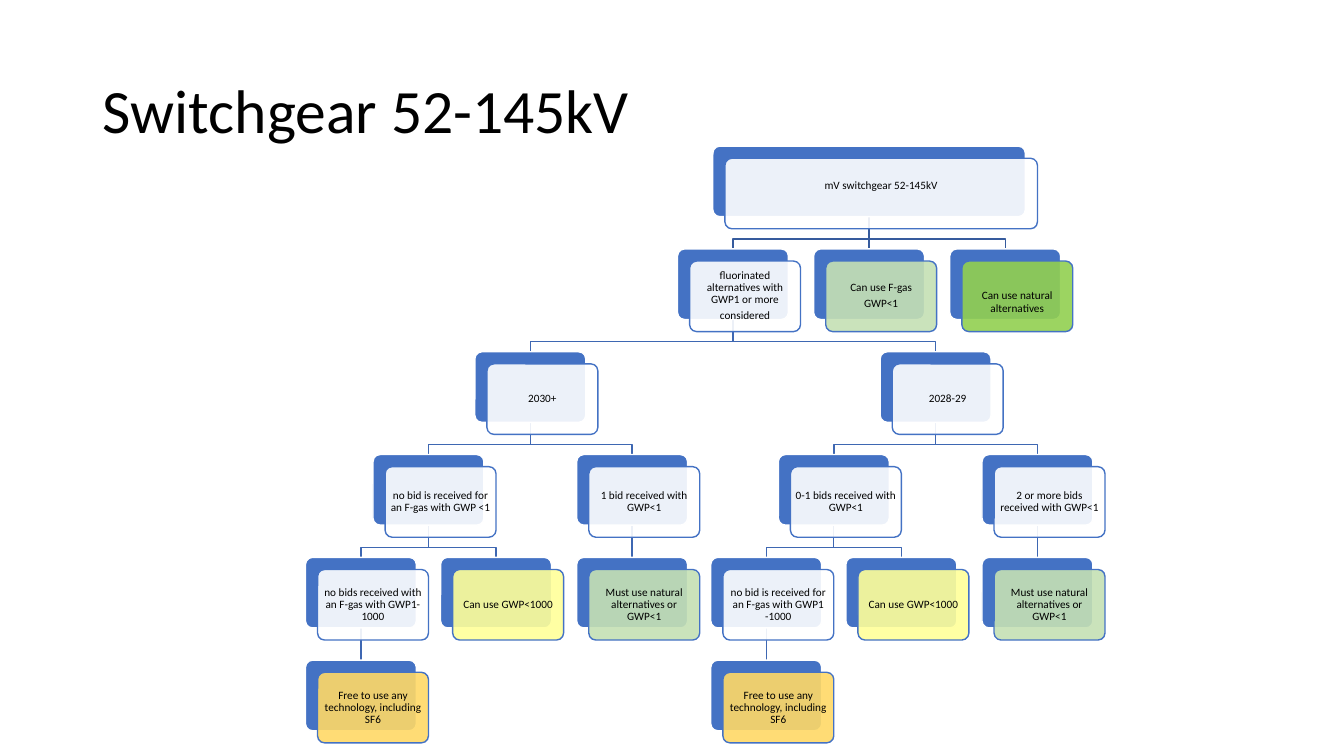
from dataclasses import dataclass

from lxml.etree import SubElement
from pptx import Presentation
from pptx.dml.color import RGBColor
from pptx.enum.shapes import MSO_CONNECTOR, MSO_SHAPE
from pptx.enum.text import MSO_ANCHOR, MSO_AUTO_SIZE, PP_ALIGN
from pptx.oxml.ns import qn
from pptx.util import Pt

PX = 9144  # EMU in one px, 100 px to the inch
FONT = "Calibri"
COLORS = {
    "text": "000000",
    "blue": "4472C4",
    "white": "FFFFFF",
    "mint": "C5E0B4",
    "green": "92D050",
    "yellow": "FFFF99",
    "amber": "FFD966",
    "root line": "365B9D",
    "branch line": "3E67B2",
}

# Tree geometry in px
ROOT_CENTER, ROOT_TOP = 862, 145
CARD_WIDTH, CARD_HEIGHT, ROOT_WIDTH = 110, 70, 310
ROW_PITCH, ELBOW_DROP = 102, 22
FRONT_OFFSET, INSET = 12, 3
SIBLING_GAPS = (135, 403, 202, 135, 0, 0)  # between children of a card in each row


@dataclass(frozen=True)
class Card:
    text: str
    fill: str = "white"
    children: tuple["Card", ...] = ()
    width: int = CARD_WIDTH
    top_extra: int = 0
    bottom_extra: int = 0


@dataclass(frozen=True)
class Placed:
    card: Card
    center: int
    row: int

    @property
    def top(self) -> int:
        return ROOT_TOP + self.row * ROW_PITCH

    @property
    def bottom(self) -> int:
        return self.top + CARD_HEIGHT


# Decision tree
FREE_CHOICE = Card("Free to use any technology, including SF6", "amber")
LIMITED_GWP = Card("Can use GWP<1000", "yellow")
NATURAL_ONLY = Card("Must use natural alternatives or GWP<1", "mint")

FROM_2030 = Card("2030+", children=(
    Card("no bid is received for an F-gas with GWP <1", children=(
        Card("no bids received with an F-gas with GWP1-1000", children=(FREE_CHOICE,)),
        LIMITED_GWP,
    )),
    Card("1 bid received with GWP<1", children=(NATURAL_ONLY,)),
))
FROM_2028 = Card("2028-29", children=(
    Card("0-1 bids received with GWP<1", children=(
        Card("no bid is received for an F-gas with GWP1 -1000", children=(FREE_CHOICE,)),
        LIMITED_GWP,
    )),
    Card("2 or more bids received with GWP<1", children=(NATURAL_ONLY,)),
))
ROOT = Card("mV switchgear 52-145kV", width=ROOT_WIDTH, bottom_extra=16, children=(
    Card("fluorinated alternatives with GWP1 or more\nconsidered",
         children=(FROM_2030, FROM_2028)),
    Card("Can use F-gas\nGWP<1", "mint"),
    Card("Can use natural alternatives", "green", top_extra=12),
))


def color(name: str) -> RGBColor:
    return RGBColor.from_string(COLORS[name])


def format_paragraph(para, size: float, align: PP_ALIGN) -> None:
    para.alignment = align
    para.line_spacing = 0.9
    for span in para.runs:
        span.font.name = FONT
        span.font.size = Pt(size)
        span.font.color.rgb = color("text")


def place_children(parent: Placed) -> list[Placed]:
    children = parent.card.children
    gap = SIBLING_GAPS[parent.row]
    first = parent.center - gap * (len(children) - 1) / 2
    return [Placed(child, round(first + index * gap), parent.row + 1)
            for index, child in enumerate(children)]


def draw_branch(shapes, parent: Placed, child: Placed) -> None:
    if parent.center == child.center:
        branch = shapes.add_connector(
            MSO_CONNECTOR.STRAIGHT, parent.center * PX, parent.bottom * PX,
            child.center * PX, child.top * PX)
        line = branch.line
    else:
        elbow = parent.bottom + ELBOW_DROP
        outline = shapes.build_freeform(parent.center, parent.bottom, scale=PX)
        outline.add_line_segments(
            [(parent.center, elbow), (child.center, elbow), (child.center, child.top)],
            close=False)
        branch = outline.convert_to_shape()
        branch.fill.background()
        line = branch.line
    line.color.rgb = color("root line" if parent.row == 0 else "branch line")
    line.width = Pt(1)
    SubElement(branch._element.spPr, qn("a:effectLst"))


def draw_panel(shapes, left: int, top: int, width: int, fill: str, line: str):
    panel = shapes.add_shape(MSO_SHAPE.ROUNDED_RECTANGLE, left * PX, top * PX,
                             width * PX, CARD_HEIGHT * PX)
    panel.adjustments[0] = 0.1
    panel.shadow.inherit = False
    panel.fill.solid()
    panel.fill.fore_color.rgb = color(fill)
    panel.line.color.rgb = color(line)
    panel.line.width = Pt(1)
    return panel


def draw_card(shapes, placed: Placed) -> None:
    card = placed.card
    left = placed.center - card.width // 2
    draw_panel(shapes, left, placed.top, card.width, "blue", "white")
    front = draw_panel(shapes, left + FRONT_OFFSET, placed.top + FRONT_OFFSET,
                       card.width, card.fill, "blue")
    fill_color = front._element.spPr.find(qn("a:solidFill"))[0]
    SubElement(fill_color, qn("a:alpha"), val="90000")

    frame = front.text_frame
    frame.word_wrap = True
    frame.vertical_anchor = MSO_ANCHOR.MIDDLE
    frame.margin_left = frame.margin_right = INSET * PX
    frame.margin_top = (INSET + card.top_extra) * PX
    frame.margin_bottom = (INSET + card.bottom_extra) * PX
    frame.text = card.text
    for para in frame.paragraphs:
        format_paragraph(para, 8, PP_ALIGN.CENTER)
        para.space_after = Pt(2.8)


def draw_branches(shapes, parent: Placed) -> None:
    for child in place_children(parent):
        draw_branch(shapes, parent, child)
        draw_branches(shapes, child)


def draw_cards(shapes, parent: Placed) -> None:
    draw_card(shapes, parent)
    for child in place_children(parent):
        draw_cards(shapes, child)


def draw_title(title) -> None:
    title.left, title.top, title.width, title.height = (
        92 * PX, 40 * PX, 1150 * PX, 145 * PX)
    frame = title.text_frame
    frame.text = "Switchgear 52-145kV"
    frame.word_wrap = True
    frame.auto_size = MSO_AUTO_SIZE.NONE
    frame.vertical_anchor = MSO_ANCHOR.MIDDLE
    format_paragraph(frame.paragraphs[0], 44, PP_ALIGN.LEFT)


def main() -> None:
    deck = Presentation()
    deck.slide_width, deck.slide_height = 1333 * PX, 750 * PX
    page = deck.slides.add_slide(deck.slide_layouts[5])
    draw_title(page.shapes.title)

    # Branches lie behind the cards
    root = Placed(ROOT, ROOT_CENTER, 0)
    draw_branches(page.shapes, root)
    draw_cards(page.shapes, root)
    deck.save("out.pptx")


if __name__ == "__main__":
    main()
